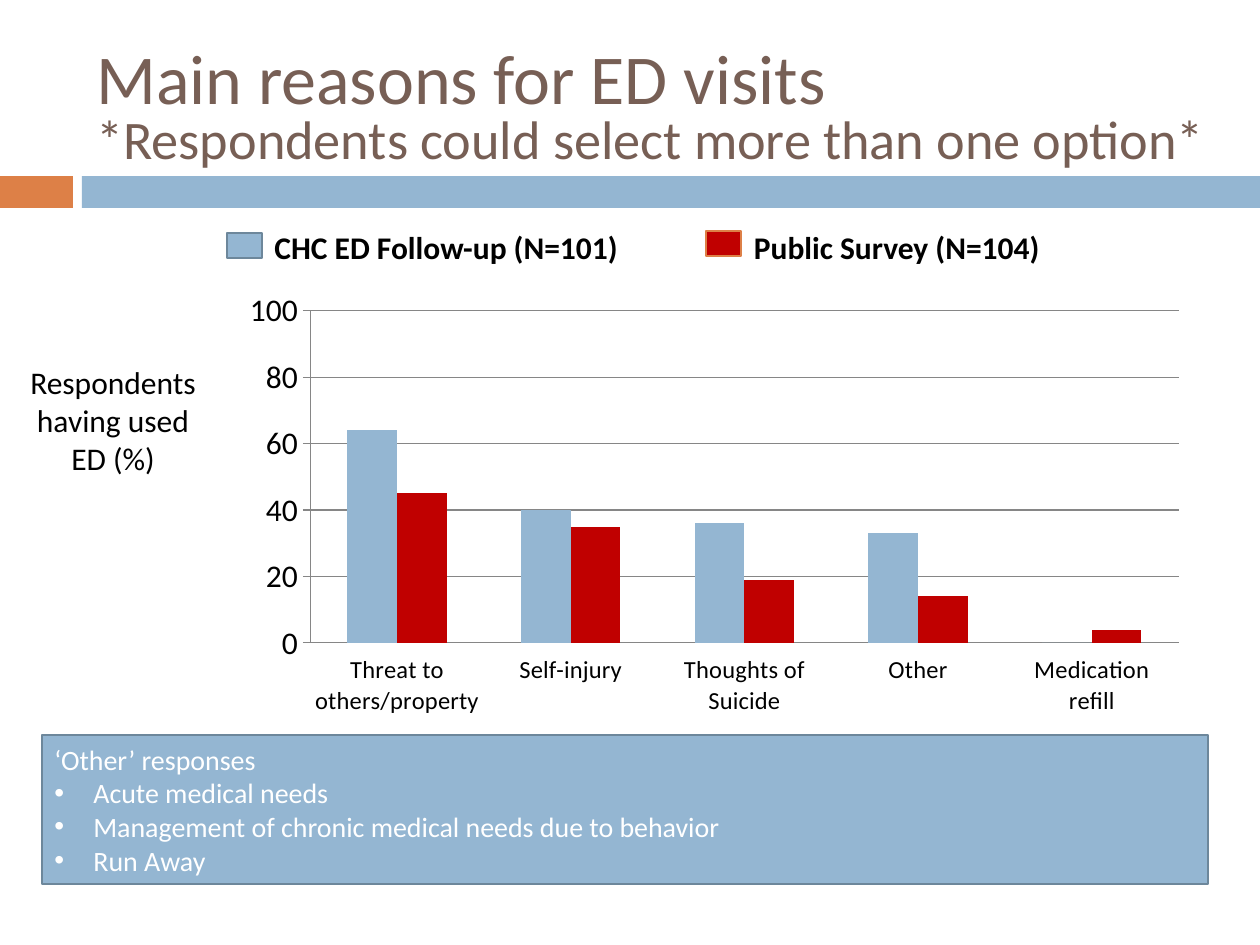
"""Build the slide on the main reasons for emergency department visits."""
from dataclasses import dataclass

from lxml import etree
from pptx import Presentation
from pptx.chart.data import CategoryChartData as ChartData
from pptx.dml.color import RGBColor as Rgb
from pptx.enum.chart import XL_CHART_TYPE as ChartType
from pptx.enum.chart import XL_TICK_LABEL_POSITION as LabelPos
from pptx.enum.chart import XL_TICK_MARK as Tick
from pptx.enum.shapes import MSO_SHAPE as Preset
from pptx.enum.text import MSO_ANCHOR as Anchor
from pptx.enum.text import PP_ALIGN as Align
from pptx.oxml import parse_xml
from pptx.oxml.ns import nsdecls, qn
from pptx.util import Emu, Pt

PX_PER_INCH = 126
FONT = "Calibri"
COLORS = {
    "blue": "94B6D2", "edge": "6D879B", "orange": "DD8047", "red": "C00000",
    "brown": "775F55", "black": "000000", "white": "FFFFFF", "grid": "868686",
}


@dataclass(frozen=True)
class Area:
    left: int
    top: int
    width: int
    height: int

    def emu(self) -> tuple:
        return tuple(px(v) for v in (self.left, self.top, self.width, self.height))


@dataclass(frozen=True)
class Block:
    area: Area
    fill: str
    line: str | None = None


@dataclass(frozen=True)
class Span:
    text: str
    size: int
    color: str = "black"
    bold: bool = False


@dataclass(frozen=True)
class Label:
    area: Area
    spans: tuple
    para_format: dict
    frame_format: dict


def px(value: int) -> Emu:
    return Emu(round(value * 914400 / PX_PER_INCH))


def rgb(name: str) -> Rgb:
    return Rgb.from_string(COLORS[name])


def set_all(target, values: dict) -> None:
    for name, value in values.items():
        setattr(target, name, value)


def style_font(font, size: int, color: str = "black", bold: bool = False) -> None:
    set_all(font, {"name": FONT, "size": Pt(size), "bold": bold})
    font.color.rgb = rgb(color)


def add_span(para, span: Span) -> None:
    run = para.add_run()
    run.text = span.text
    style_font(run.font, span.size, span.color, span.bold)


def add_block(page, block: Block):
    box = page.shapes.add_shape(Preset.RECTANGLE, *block.area.emu())
    box.shadow.inherit = False
    box.fill.solid()
    box.fill.fore_color.rgb = rgb(block.fill)
    if block.line:
        box.line.color.rgb = rgb(block.line)
        box.line.width = Pt(1.5)
    else:
        box.line.fill.background()
    return box


def add_label(page, label: Label) -> None:
    frame = page.shapes.add_textbox(*label.area.emu()).text_frame
    set_all(frame, {"word_wrap": True, **label.frame_format})
    para = frame.paragraphs[0]
    set_all(para, label.para_format)
    for index, span in enumerate(label.spans):
        if index:
            para.add_line_break()
        add_span(para, span)


def add_bullet(para) -> None:
    props = para._p.get_or_add_pPr()
    props.set("marL", str(px(39)))
    props.set("indent", str(px(-39)))
    etree.SubElement(props, qn("a:buFont")).set("typeface", "Arial")
    etree.SubElement(props, qn("a:buChar")).set("char", "•")


def add_responses(page, block: Block, heading: str, items: tuple) -> None:
    frame = add_block(page, block).text_frame
    set_all(frame, {"word_wrap": True, "vertical_anchor": Anchor.MIDDLE})
    for index, text in enumerate((heading, *items)):
        para = frame.add_paragraph() if index else frame.paragraphs[0]
        para.alignment = Align.LEFT
        if index:
            add_bullet(para)
        add_span(para, Span(text, 16, "white"))


def place_plot(chart, outer: Area, inner: Area) -> None:
    fractions = {
        "x": (inner.left - outer.left) / outer.width,
        "y": (inner.top - outer.top) / outer.height,
        "w": inner.width / outer.width,
        "h": inner.height / outer.height,
    }
    modes = '<c:layoutTarget val="inner"/><c:xMode val="edge"/><c:yMode val="edge"/>'
    sizes = "".join(f'<c:{key} val="{value:.3f}"/>' for key, value in fractions.items())
    plot_area = chart._chartSpace.chart.plotArea
    for old in plot_area.findall(qn("c:layout")):
        plot_area.remove(old)
    plot_area.insert(0, parse_xml(
        f'<c:layout {nsdecls("c")}><c:manualLayout>{modes}{sizes}</c:manualLayout></c:layout>'))


def add_visits_chart(page, outer: Area, inner: Area, categories: tuple, series: tuple) -> None:
    data = ChartData()
    data.categories = categories
    for name, values, _ in series:
        data.add_series(name, values)
    chart = page.shapes.add_chart(ChartType.COLUMN_CLUSTERED, *outer.emu(), data).chart
    set_all(chart, {"has_legend": False, "has_title": False})
    style_font(chart.font, 10)
    plot = chart.plots[0]
    set_all(plot, {"gap_width": 150, "overlap": 0, "vary_by_categories": False})
    for bars, (_, _, color) in zip(plot.series, series):
        bars.format.fill.solid()
        bars.format.fill.fore_color.rgb = rgb(color)
    axes = (
        (chart.category_axis, 14, {"major_tick_mark": Tick.NONE, "tick_label_position": LabelPos.LOW}),
        (chart.value_axis, 18, {"major_tick_mark": Tick.CROSS, "minimum_scale": 0, "maximum_scale": 100,
                                "major_unit": 20, "has_major_gridlines": True}),
    )
    for axis, size, values in axes:
        set_all(axis, values)
        style_font(axis.tick_labels.font, size)
        axis.format.line.color.rgb = rgb("grid")
    set_all(chart.value_axis.tick_labels, {"number_format": "#,##0", "number_format_is_linked": False})
    chart.value_axis.major_gridlines.format.line.color.rgb = rgb("grid")
    place_plot(chart, outer, inner)


BLOCKS = (
    Block(Area(0, 176, 73, 32), "orange"),
    Block(Area(82, 176, 1178, 32), "blue"),
    Block(Area(227, 233, 35, 25), "blue", "edge"),
    Block(Area(706, 231, 35, 25), "red", "orange"),
)
LABELS = (
    Label(Area(84, 42, 1187, 136),
          (Span("Main reasons for ED visits", 40, "brown"),
           Span("*Respondents could select more than one option*", 31, "brown")),
          {"line_spacing": 0.8}, {"vertical_anchor": Anchor.MIDDLE}),
    Label(Area(16, 357, 194, 127), (Span("Respondents having used ED (%)", 18),),
          {"alignment": Align.CENTER}, {}),
    Label(Area(262, 222, 465, 50), (Span("CHC ED Follow-up (N=101)", 18, bold=True),), {}, {}),
    Label(Area(727, 222, 465, 50), (Span("Public Survey (N=104)", 18, bold=True),),
          {}, {"margin_left": px(27)}),
)
CATEGORIES = ("Threat to others/property", "Self-injury", "Thoughts of Suicide", "Other", "Medication refill")
SERIES = (
    ("Series 1", (64, 40, 36, 33, 0), "blue"),
    ("Series 2", (45, 35, 19, 14, 4), "red"),
)


def main() -> None:
    deck = Presentation()
    set_all(deck, {"slide_width": px(1260), "slide_height": px(945)})
    page = deck.slides.add_slide(deck.slide_layouts[6])
    for block in BLOCKS:
        add_block(page, block)
    for label in LABELS:
        add_label(page, label)
    add_responses(page, Block(Area(42, 735, 1166, 149), "blue", "edge"), "‘Other’ responses",
                  ("Acute medical needs", "Management of chronic medical needs due to behavior", "Run Away"))
    add_visits_chart(page, Area(231, 284, 966, 441), Area(310, 311, 868, 332), CATEGORIES, SERIES)
    deck.save("out.pptx")


if __name__ == "__main__":
    main()
